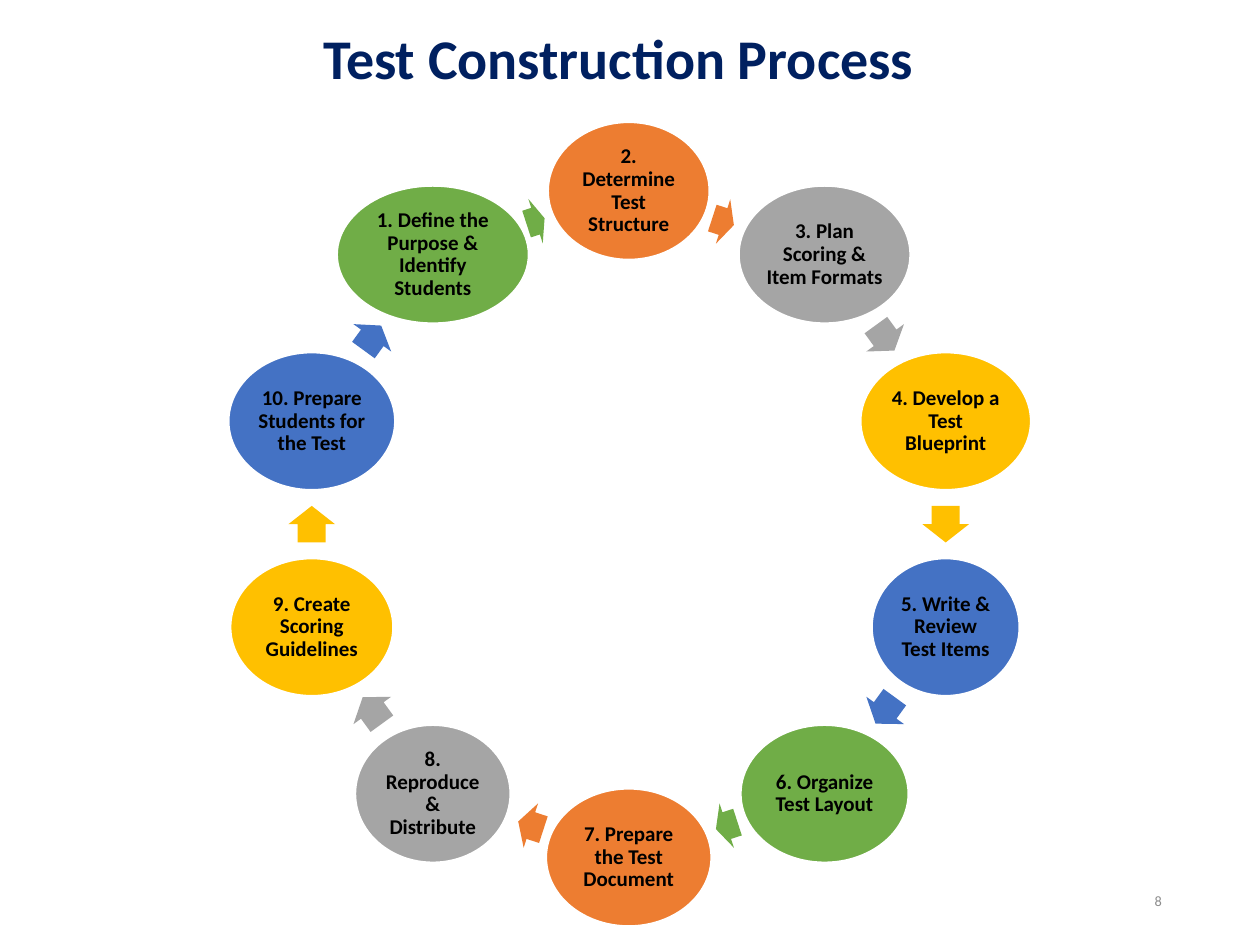
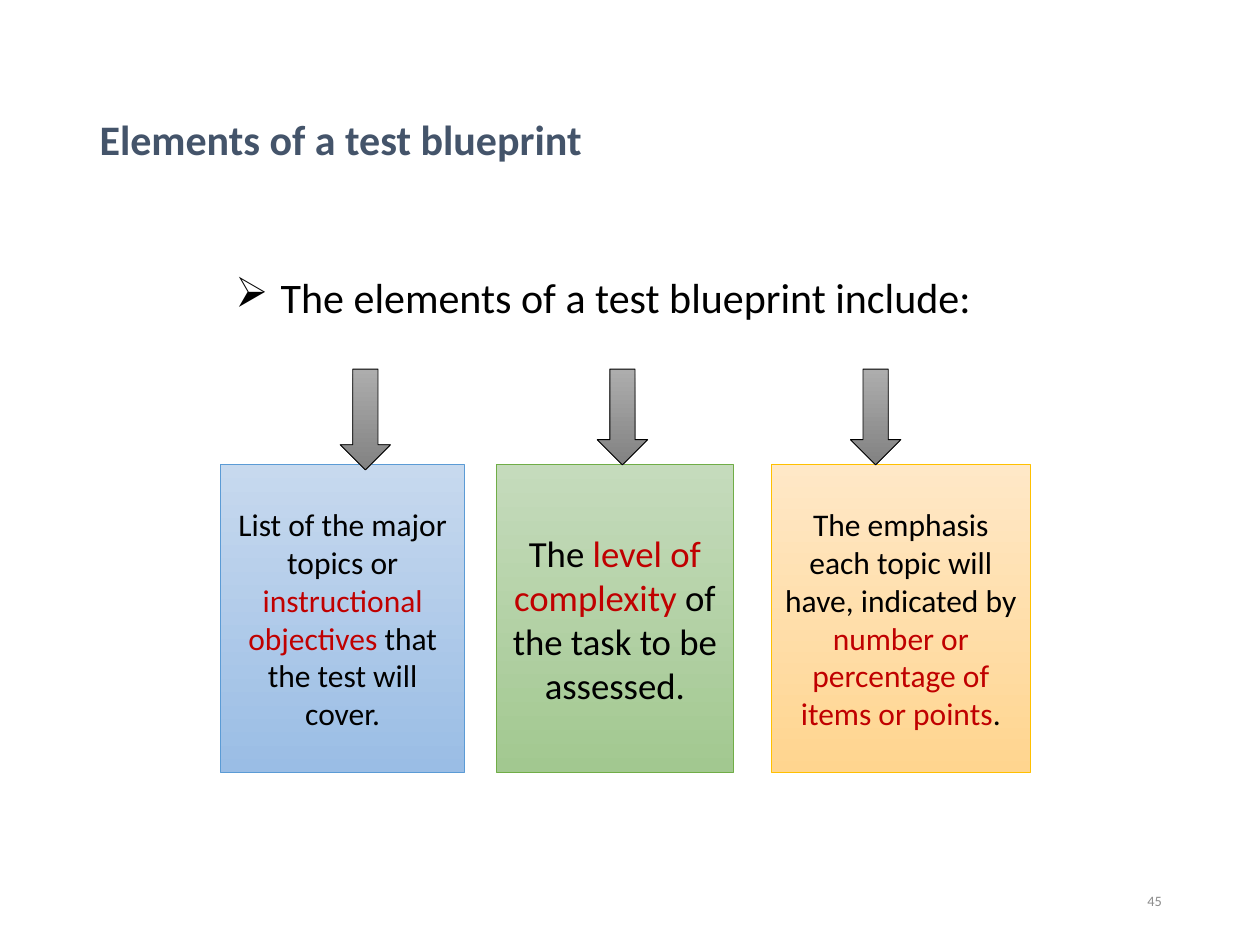
from math import cos, radians, sin

from lxml import etree
from pptx import Presentation
from pptx.dml.color import RGBColor
from pptx.enum.shapes import MSO_SHAPE as Shape
from pptx.enum.text import MSO_ANCHOR as Anchor, MSO_AUTO_SIZE as AutoSize, PP_ALIGN as Align
from pptx.oxml.ns import qn
from pptx.util import Inches, Pt

FONT = "Calibri"
COLORS = {
    "navy": "002060", "slate": "44546A", "black": "000000", "white": "FFFFFF",
    "page": "8C8C8C", "accent": "C00000", "sky": "5B9BD5",
    "orange": "ED7D31", "gray": "A5A5A5", "gold": "FFC000",
    "blue": "4472C4", "green": "70AD47",
}
GRADIENTS = {
    "sky": ("C7D9EE", "9ABDE5"),
    "green": ("C5DBBC", "A2C890"),
    "gold": ("FFE8C7", "FFD58F"),
    "gray": ("ADADAD", "828282"),
}
CYCLE_COLORS = ("orange", "gray", "gold", "blue", "green")
RING_CENTER = (4.99, 4.16)
RING_RADIUS = 2.645
STEP_HEIGHT = 1.09
ARROW_HEIGHT = 0.37
# label, ellipse width, following arrow length, arrow shift along the ring
STEPS = (
    ("2. Determine Test Structure", 1.28, 0.18, -0.03),
    ("3. Plan Scoring & Item Formats", 1.36, 0.25, 0),
    ("4. Develop a Test Blueprint", 1.35, 0.29, 0),
    ("5. Write & Review Test Items", 1.17, 0.26, 0),
    ("6. Organize Test Layout", 1.33, 0.18, 0),
    ("7. Prepare the Test Document", 1.31, 0.21, 0),
    ("8. Reproduce & Distribute", 1.23, 0.26, 0),
    ("9. Create Scoring Guidelines", 1.29, 0.29, 0),
    ("10. Prepare Students for the Test", 1.32, 0.24, 0),
    ("1. Define the Purpose & Identify Students", 1.52, 0.15, 0.04),
)
ELEMENTS_TOP, ELEMENTS_HEIGHT = 3.69, 2.44
ELEMENTS = (
    (1.75, 1.94, "sky", 18, ("List of the major topics or ",
                             "instructional objectives ", "that the test will cover.")),
    (3.94, 1.88, "green", 21, ("The ", "level of complexity ", "of the task to be assessed.")),
    (6.12, 2.06, "gold", 18, ("The emphasis each topic will have, indicated by ",
                              "number or percentage of items or points", ".")),
)
POINTERS = ((2.7, 0.8), (4.74, 0.76), (6.75, 0.76))


def rgb(name):
    return RGBColor.from_string(COLORS[name])


def style(paragraph, size, color, align=Align.LEFT, bold=False, spacing=None):
    paragraph.alignment = align
    paragraph.line_spacing = spacing
    font = paragraph.font
    font.name, font.size, font.bold = FONT, Pt(size), bold
    font.color.rgb = rgb(color)


def add_titled_slide(deck, title, box, size, color, align, page):
    slide = deck.slides.add_slide(deck.slide_layouts[5])
    heading = slide.shapes.title
    heading.left, heading.top, heading.width, heading.height = map(Inches, box)
    frame = heading.text_frame
    frame.text = title
    frame.auto_size = AutoSize.NONE
    frame.vertical_anchor = Anchor.MIDDLE
    style(frame.paragraphs[0], size, color, align, True, 0.9)
    number = add_text(slide, page, (7.07, 6.95, 2.25, 0.4))
    number.vertical_anchor = Anchor.MIDDLE
    style(number.paragraphs[0], 8.2, "page", Align.RIGHT)
    return slide


def add_text(slide, text, box):
    frame = slide.shapes.add_textbox(*map(Inches, box)).text_frame
    frame.word_wrap = True
    frame.text = text
    return frame


def add_figure(slide, kind, box, line=None, weight=1.0):
    figure = slide.shapes.add_shape(kind, *map(Inches, box))
    figure.shadow.inherit = False
    if line:
        figure.line.color.rgb = rgb(line)
        figure.line.width = Pt(weight)
    else:
        figure.line.fill.background()
    return figure


def fill_solid(figure, color):
    figure.fill.solid()
    figure.fill.fore_color.rgb = rgb(color)


def fill_gradient(figure, name):
    figure.fill.gradient()
    figure.fill.gradient_angle = 270
    for stop, color in zip(figure.fill.gradient_stops, GRADIENTS[name]):
        stop.color.rgb = RGBColor.from_string(color)


def ring_point(angle, radius):
    x, y = RING_CENTER
    return x + radius * cos(radians(angle)), y + radius * sin(radians(angle))


def centered_box(x, y, width, height):
    return x - width / 2, y - height / 2, width, height


def add_step(slide, label, angle, width, color):
    box = centered_box(*ring_point(angle, RING_RADIUS), width, STEP_HEIGHT)
    step = add_figure(slide, Shape.OVAL, box, "white")
    fill_solid(step, color)
    frame = step.text_frame
    frame.margin_left = frame.margin_right = Inches(0.02)
    frame.margin_top = frame.margin_bottom = Inches(0.02)
    frame.word_wrap = True
    frame.vertical_anchor = Anchor.MIDDLE
    frame.text = label
    style(frame.paragraphs[0], 12, "black", Align.CENTER, True, 0.9)


def add_step_arrow(slide, angle, length, shift, color):
    x, y = ring_point(angle, RING_RADIUS * cos(radians(18)))
    direction = angle + 90
    x += shift * cos(radians(direction))
    y += shift * sin(radians(direction))
    arrow = add_figure(slide, Shape.RIGHT_ARROW, centered_box(x, y, length, ARROW_HEIGHT))
    arrow.adjustments[0], arrow.adjustments[1] = 0.6, 0.5
    arrow.rotation = direction
    fill_solid(arrow, color)


def add_element(slide, left, width, color, size, wording):
    box = (left, ELEMENTS_TOP, width, ELEMENTS_HEIGHT)
    element = add_figure(slide, Shape.RECTANGLE, box, color, 0.5)
    fill_gradient(element, color)
    frame = element.text_frame
    frame.word_wrap = True
    frame.vertical_anchor = Anchor.MIDDLE
    paragraph = frame.paragraphs[0]
    style(paragraph, size, "black", Align.CENTER)
    for text, shade in zip(wording, ("black", "accent", "black")):
        run = paragraph.add_run()
        run.text = text
        run.font.color.rgb = rgb(shade)


def add_bullet(paragraph, symbol, indent):
    properties = paragraph._p.get_or_add_pPr()
    properties.set("marL", str(Inches(indent)))
    properties.set("indent", str(-Inches(indent)))
    bullet = etree.Element(qn("a:buChar"), char=symbol)
    defaults = properties.find(qn("a:defRPr"))
    if defaults is None:
        properties.append(bullet)
    else:
        defaults.addprevious(bullet)


def build_process(deck):
    slide = add_titled_slide(deck, "Test Construction Process", (0.6, 0.15, 8.62, 0.68),
                             32, "navy", Align.CENTER, "8")
    turn = 360 / len(STEPS)
    for index, (label, width, length, shift) in enumerate(STEPS):
        angle = index * turn - 90
        color = CYCLE_COLORS[index % len(CYCLE_COLORS)]
        add_step(slide, label, angle, width, color)
        add_step_arrow(slide, angle + turn / 2, length, shift, color)


def build_blueprint(deck):
    slide = add_titled_slide(deck, "Elements of a test blueprint", (0.69, 0.4, 8.62, 1.45),
                             24, "slate", Align.LEFT, "45")
    intro = add_text(slide, "The elements of a test blueprint include:", (1.77, 2.15, 6.47, 0.5))
    style(intro.paragraphs[0], 24, "black", spacing=0.9)
    add_bullet(intro.paragraphs[0], "➢", 0.36)
    for element in ELEMENTS:
        add_element(slide, *element)
    for left, height in POINTERS:
        pointer = add_figure(slide, Shape.DOWN_ARROW, (left, 2.93, 0.4, height), "black", 0.5)
        fill_gradient(pointer, "gray")


def main():
    deck = Presentation()
    deck.slide_width, deck.slide_height = Inches(10), Inches(7.5)
    build_process(deck)
    build_blueprint(deck)
    deck.save("out.pptx")


if __name__ == "__main__":
    main()
